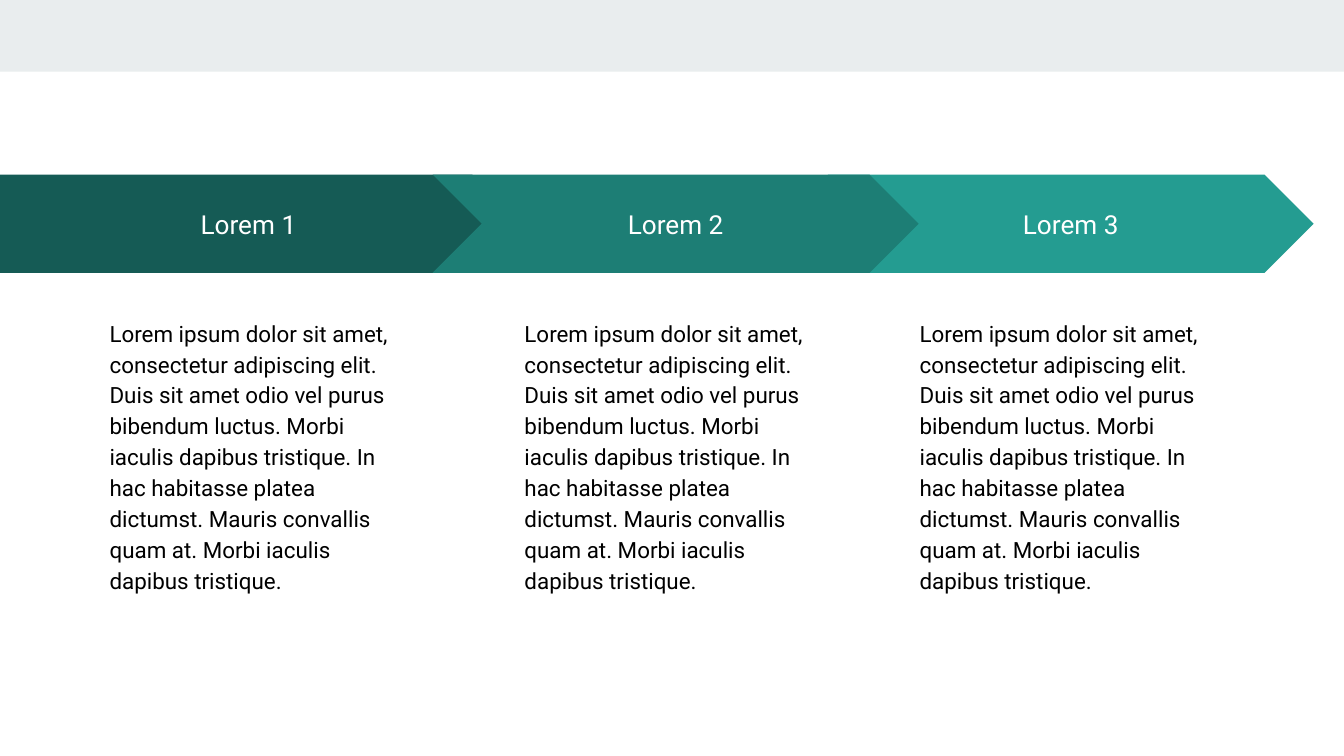
from dataclasses import dataclass

from pptx import Presentation
from pptx.dml.color import RGBColor
from pptx.enum.shapes import MSO_SHAPE
from pptx.enum.text import MSO_ANCHOR, PP_ALIGN
from pptx.shapes.autoshape import Shape
from pptx.slide import Slide
from pptx.text.text import TextFrame
from pptx.util import Inches, Pt

CELL = 0.1
COLUMNS, ROWS = 100, 56.25
FONT = "Roboto"
COLORS = {
    "band": "E9EDEE",
    "dark": "155B55",
    "middle": "1D7E75",
    "light": "249C91",
    "label": "FFFFFF",
    "body": "000000",
}
BODY = (
    "Lorem ipsum dolor sit amet, consectetur adipiscing elit. "
    "Duis sit amet odio vel purus bibendum luctus. Morbi iaculis dapibus tristique. "
    "In hac habitasse platea dictumst. Mauris convallis quam at. "
    "Morbi iaculis dapibus tristique."
)
BAND_HEIGHT = 5.33
ARROW_TOP, ARROW_HEIGHT = 13, 7.3
BODY_TOP, BODY_WIDTH, BODY_HEIGHT = 22.5, 24.5, 28.6
CHEVRON_LEFT, CHEVRON_WIDTH, CHEVRON_PITCH = 32.2, 36.15, 29.4
BODY_INDENT = 5.84


@dataclass(frozen=True)
class Step:
    label: str
    color: str
    outline: MSO_SHAPE
    left: float
    width: float
    body_left: float


def grid(cells: float) -> int:
    return Inches(cells * CELL)


def chevron_step(label: str, color: str, position: int) -> Step:
    left = CHEVRON_LEFT + position * CHEVRON_PITCH
    return Step(label, color, MSO_SHAPE.CHEVRON, left, CHEVRON_WIDTH, left + BODY_INDENT)


def add_block(slide: Slide, outline: MSO_SHAPE, color: str,
              left: float, top: float, width: float, height: float) -> Shape:
    shape = slide.shapes.add_shape(
        outline, grid(left), grid(top), grid(width), grid(height)
    )
    shape.shadow.inherit = False
    shape.fill.solid()
    shape.fill.fore_color.rgb = RGBColor.from_string(COLORS[color])
    shape.line.fill.background()
    return shape


def write(frame: TextFrame, text: str, size: int, color: str,
          alignment: PP_ALIGN, anchor: MSO_ANCHOR, spacing: float) -> None:
    frame.word_wrap = True
    frame.vertical_anchor = anchor
    frame.margin_left = frame.margin_right = grid(1)
    frame.margin_top = frame.margin_bottom = grid(1)
    paragraph = frame.paragraphs[0]
    paragraph.alignment = alignment
    paragraph.line_spacing = spacing
    run = paragraph.add_run()
    run.text = text
    run.font.name = FONT
    run.font.size = Pt(size)
    run.font.color.rgb = RGBColor.from_string(COLORS[color])


def add_step(slide: Slide, step: Step) -> None:
    arrow = add_block(slide, step.outline, step.color,
                      step.left, ARROW_TOP, step.width, ARROW_HEIGHT)
    arrow.adjustments[0] = 0.5
    write(arrow.text_frame, step.label, 14, "label",
          PP_ALIGN.CENTER, MSO_ANCHOR.MIDDLE, 1.0)
    body = slide.shapes.add_textbox(
        grid(step.body_left), grid(BODY_TOP), grid(BODY_WIDTH), grid(BODY_HEIGHT)
    )
    write(body.text_frame, BODY, 12, "body", PP_ALIGN.LEFT, MSO_ANCHOR.TOP, 1.15)


def main() -> None:
    presentation = Presentation()
    presentation.slide_width = grid(COLUMNS)
    presentation.slide_height = grid(ROWS)
    slide = presentation.slides.add_slide(presentation.slide_layouts[6])

    add_block(slide, MSO_SHAPE.RECTANGLE, "band", 0, 0, COLUMNS, BAND_HEIGHT)
    steps_back_to_front = [
        chevron_step("Lorem 3", "light", 1),
        Step("Lorem 1", "dark", MSO_SHAPE.PENTAGON, 0, 38.8, 7.17),
        chevron_step("Lorem 2", "middle", 0),
    ]
    for step in steps_back_to_front:
        add_step(slide, step)

    presentation.save("out.pptx")


if __name__ == "__main__":
    main()
